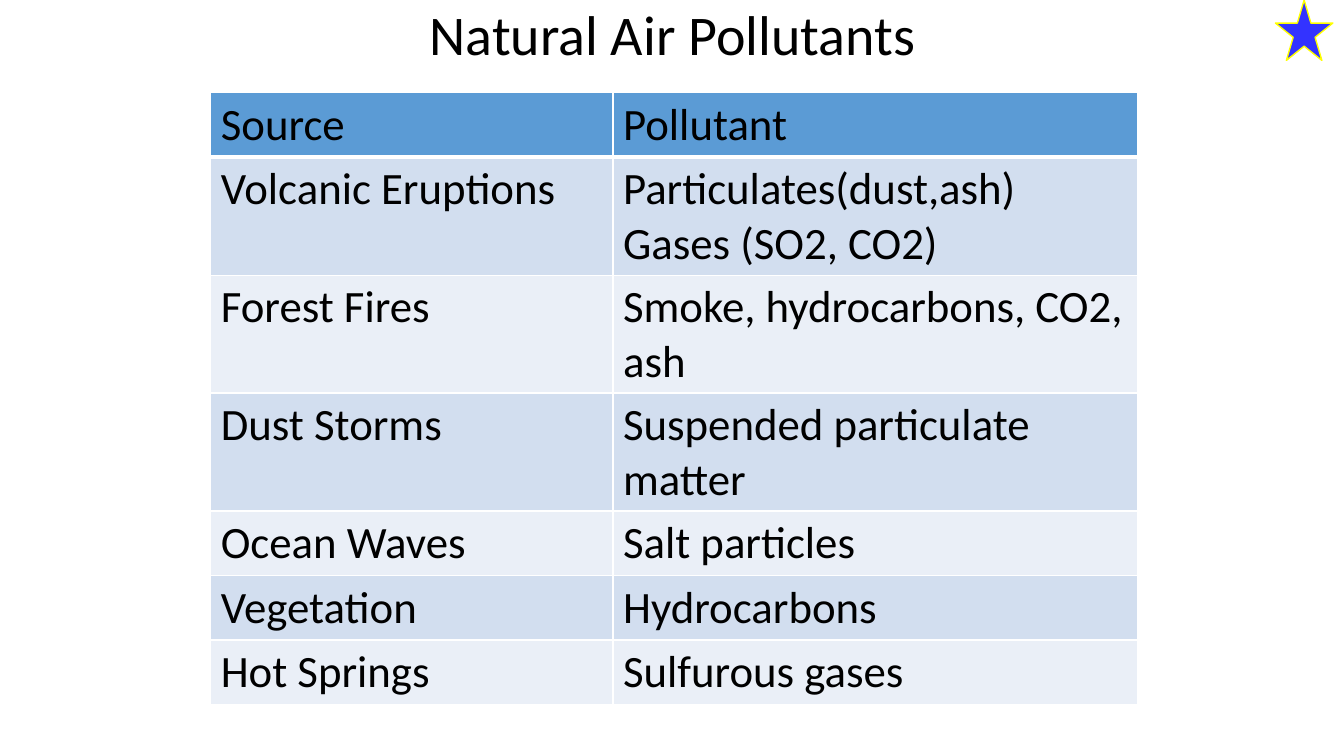
from lxml import etree
from pptx import Presentation
from pptx.dml.color import RGBColor
from pptx.enum import shapes, text
from pptx.oxml import ns
from pptx.util import Inches, Pt

FONT = "Calibri"
BLACK = RGBColor(0x00, 0x00, 0x00)
WHITE = RGBColor(0xFF, 0xFF, 0xFF)
HEADER_BLUE = RGBColor(0x5B, 0x9B, 0xD5)
BAND_DARK = RGBColor(0xD2, 0xDE, 0xEF)
BAND_LIGHT = RGBColor(0xEA, 0xEF, 0xF7)
STAR_BLUE = RGBColor(0x33, 0x33, 0xFF)
STAR_YELLOW = RGBColor(0xFF, 0xFF, 0x00)

COLUMN_WIDTHS = (3.99, 5.2)
SINGLE_ROW, DOUBLE_ROW = 0.64, 1.17
POLLUTANTS = [
    # source, pollutant, row height
    ("Source", "Pollutant", SINGLE_ROW),
    ("Volcanic Eruptions", "Particulates(dust,ash)\vGases (SO2, CO2)", DOUBLE_ROW),
    ("Forest Fires", "Smoke, hydrocarbons, CO2, ash", DOUBLE_ROW),
    ("Dust Storms", "Suspended particulate matter", DOUBLE_ROW),
    ("Ocean Waves", "Salt particles", SINGLE_ROW),
    ("Vegetation", "Hydrocarbons", SINGLE_ROW),
    ("Hot Springs", "Sulfurous gases", SINGLE_ROW),
]


def write(frame, wording, size):
    frame.text = wording
    para = frame.paragraphs[0]
    for span in para.runs:
        span.font.name = FONT
        span.font.size = Pt(size)
        span.font.bold = False
        span.font.color.rgb = BLACK
    return para


def add_title(page, wording):
    box = page.shapes.add_textbox(Inches(2.17), 0, Inches(9), Inches(0.75))
    frame = box.text_frame
    frame.word_wrap = True
    frame.vertical_anchor = text.MSO_ANCHOR.MIDDLE
    para = write(frame, wording, 40)
    para.alignment = text.PP_ALIGN.CENTER
    para.line_spacing = 0.9


def add_star(page):
    star = page.shapes.add_shape(shapes.MSO_SHAPE.STAR_5_POINT, Inches(12.65), 0,
                                 Inches(0.57), Inches(0.6))
    star.shadow.inherit = False
    star.fill.solid()
    star.fill.fore_color.rgb = STAR_BLUE
    star.line.color.rgb = STAR_YELLOW
    star.line.width = Pt(1)


def set_borders(cell, bottom_width, top_width):
    properties = cell._tc.get_or_add_tcPr()
    widths = {"a:lnL": 1, "a:lnR": 1, "a:lnT": top_width, "a:lnB": bottom_width}
    for side, width in widths.items():
        line = etree.SubElement(properties, ns.qn(side), w=str(Pt(width)))
        fill = etree.SubElement(line, ns.qn("a:solidFill"))
        etree.SubElement(fill, ns.qn("a:srgbClr"), val=str(WHITE))


def add_pollutant_table(page):
    width = sum(COLUMN_WIDTHS)
    height = sum(row[-1] for row in POLLUTANTS)
    table = page.shapes.add_table(len(POLLUTANTS), len(COLUMN_WIDTHS), Inches(2.09),
                                  Inches(0.92), Inches(width), Inches(height)).table
    for column, column_width in zip(table.columns, COLUMN_WIDTHS):
        column.width = Inches(column_width)
    for index, (*wordings, row_height) in enumerate(POLLUTANTS):
        table.rows[index].height = Inches(row_height)
        band = BAND_DARK if index % 2 else BAND_LIGHT
        for cell, wording in zip(table.rows[index].cells, wordings):
            # The rule under the header is heavier than the others
            set_borders(cell, 3 if index == 0 else 1, 3 if index == 1 else 1)
            cell.fill.solid()
            cell.fill.fore_color.rgb = HEADER_BLUE if index == 0 else band
            write(cell.text_frame, wording, 32)


def main():
    deck = Presentation()
    deck.slide_width, deck.slide_height = Inches(13.33), Inches(7.5)
    page = deck.slides.add_slide(deck.slide_layouts[6])
    add_title(page, "Natural Air Pollutants")
    add_star(page)
    add_pollutant_table(page)
    deck.save("out.pptx")


if __name__ == "__main__":
    main()
